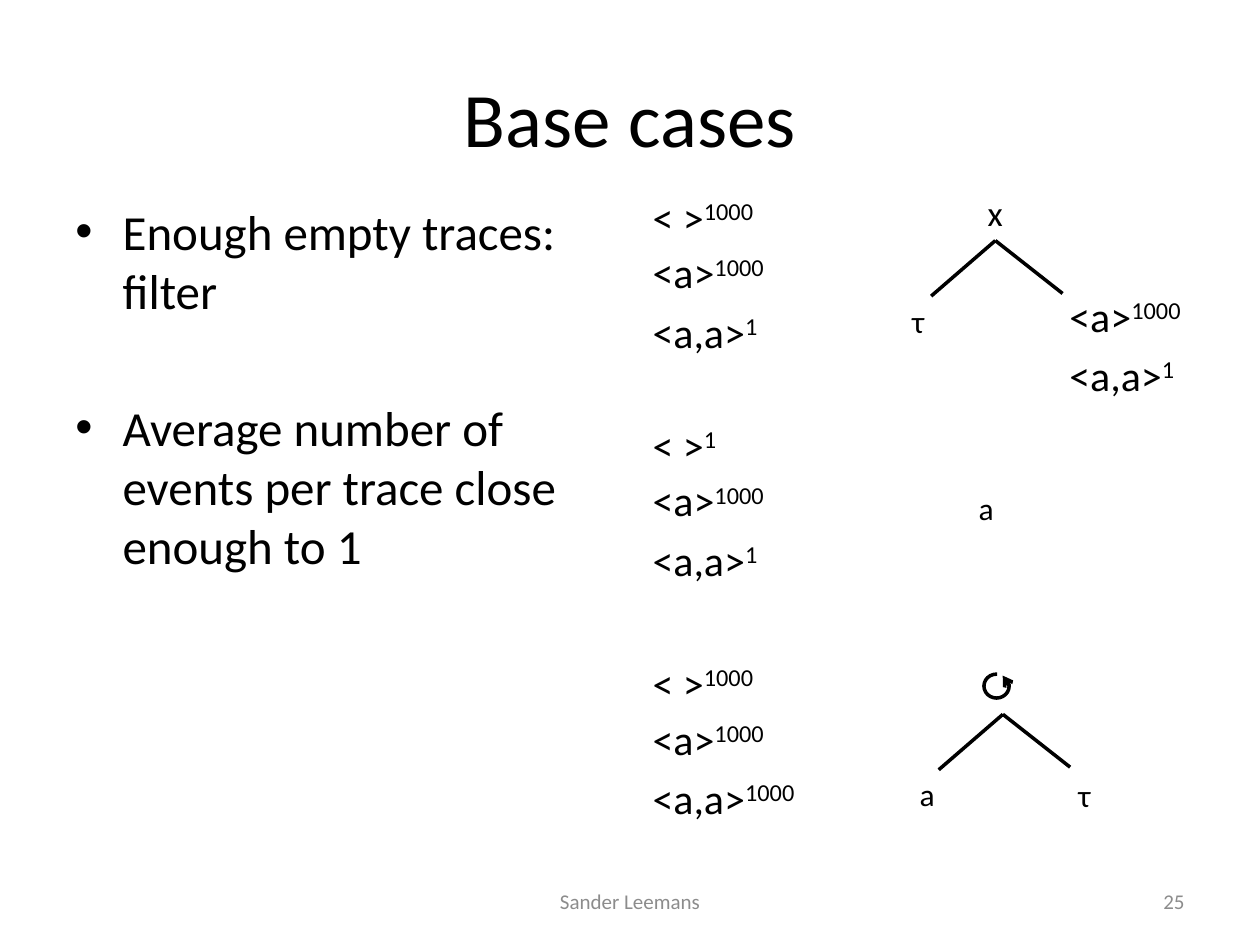
from lxml import etree
from pptx import Presentation
from pptx.dml import color
from pptx.enum import shapes, text
from pptx.oxml import ns
from pptx.util import Pt

COLOURS = {"ink": "000000", "muted": "8C8C8C"}
FONT = "Calibri"
TRACE_COLUMN = 365.8
TRACE_WIDTHS = {
    ("< >", "1"): 52.6, ("< >", "1000"): 77,
    ("<a>", "1000"): 83.5,
    ("<a,a>", "1"): 76.3, ("<a,a>", "1000"): 100.8,
}
CENTRE, RIGHT = text.PP_ALIGN.CENTER, text.PP_ALIGN.RIGHT


def apply(target, values):
    """Set each named attribute of the target."""
    for name, value in values.items():
        setattr(target, name, value)


def rgb(name):
    """Return a named colour."""
    return color.RGBColor.from_string(COLOURS[name])


def add_span(para, words, size, ink="ink", raised=False):
    """Append formatted words to a paragraph, optionally as superscript."""
    span = para.add_run()
    span.text = words
    apply(span.font, {"name": FONT, "size": Pt(size)})
    span.font.color.rgb = rgb(ink)
    if raised:
        span.font._element.set("baseline", "30000")


def add_box(parent, box, **frame_values):
    """Add an empty text box and return it."""
    shape = parent.add_textbox(*map(Pt, box))
    apply(shape.text_frame, frame_values)
    return shape


def add_label(parent, words, box, size=18):
    """Add a short unwrapped label."""
    label = add_box(parent, box, word_wrap=False,
                    auto_size=text.MSO_AUTO_SIZE.SHAPE_TO_FIT_TEXT)
    add_span(label.text_frame.paragraphs[0], words, size)
    return label


def add_title(page, words, box):
    """Place and format the title placeholder."""
    title = page.shapes.title
    apply(title, dict(zip(("left", "top", "width", "height"), map(Pt, box))))
    title.text_frame.vertical_anchor = text.MSO_ANCHOR.MIDDLE
    para = title.text_frame.paragraphs[0]
    para.alignment = CENTRE
    add_span(para, words, 44)


def add_bullets(page, items, box):
    """Add bulleted paragraphs, each given as lines and space before."""
    frame = add_box(page.shapes, box, word_wrap=True).text_frame
    for index, (lines, gap) in enumerate(items):
        para = frame.add_paragraph() if index else frame.paragraphs[0]
        para.space_before = Pt(gap)
        for number, line in enumerate(lines):
            if number:
                para.add_line_break()
            add_span(para, line, 28)
        props = para._p.get_or_add_pPr()
        props.set("marL", str(Pt(27)))
        props.set("indent", str(Pt(-27)))
        etree.SubElement(props, ns.qn("a:buFont"), typeface="Arial")
        etree.SubElement(props, ns.qn("a:buChar"), char="•")


def add_traces(parent, traces, left, top):
    """Stack traces with their frequencies as superscripts."""
    for trace, count in traces:
        width = TRACE_WIDTHS[trace, count]
        label = add_label(parent, trace, (left, top, width, 36), 24)
        add_span(label.text_frame.paragraphs[0], count, 24, raised=True)
        top += 31.7 if trace == "< >" else 34


def format_line(shape):
    """Give a shape a plain dark outline."""
    shape.line.width = Pt(2)
    shape.line.color.rgb = rgb("ink")


def add_branches(parent, x, y, operator=None):
    """Draw the two branches below a tree's operator."""
    for dx, dy in ((-36.7, 31.7), (38.4, 30.2)):
        branch = parent.add_connector(shapes.MSO_CONNECTOR.STRAIGHT,
                                      Pt(x), Pt(y), Pt(x + dx), Pt(y + dy))
        format_line(branch)
        etree.SubElement(branch._element.spPr, ns.qn("a:effectLst"))
        if operator is not None:
            branch.begin_connect(operator, 2)


def add_loop(parent, box):
    """Draw the circular loop operator with an arrowhead."""
    loop = parent.add_shape(shapes.MSO_SHAPE.ARC, *map(Pt, box))
    loop.adjustments[0], loop.adjustments[1] = 180.44, 163.68
    loop.fill.background()
    format_line(loop)
    loop.shadow.inherit = False
    etree.SubElement(loop.line._get_or_add_ln(), ns.qn("a:headEnd"), type="arrow")


def add_choice_tree(parent, x, y):
    """Draw the choice operator above its silent leaf."""
    operator = add_label(parent, "x", (x - 11.5, y - 31.7, 23, 31.7), 20)
    add_branches(parent, x, y, operator)
    add_label(parent, "τ", (x - 54.7, y + 31.7, 21.6, 29))


def add_loop_tree(parent, x, y):
    """Draw the loop operator above its two leaves."""
    add_loop(parent, (x - 10.8, y - 23, 14.4, 13.7))
    add_branches(parent, x, y)
    add_label(parent, "a", (x - 54.7, y + 31.2, 23, 29))
    add_label(parent, "τ", (x + 36, y + 31.7, 21.6, 29))


def add_leaf(parent, x, y):
    """Draw a tree that is a single activity."""
    add_label(parent, "a", (x, y, 23, 29))


def add_example(page, traces, top, draw_tree, x, dy):
    """Group a log with the tree found for it."""
    group = page.shapes.add_group_shape().shapes
    add_traces(group, traces, TRACE_COLUMN, top)
    draw_tree(group, x, top + dy)


def add_footer(page, words, box, alignment):
    """Add one muted footer text."""
    frame = add_box(page.shapes, box, word_wrap=True,
                    vertical_anchor=text.MSO_ANCHOR.MIDDLE).text_frame
    frame.paragraphs[0].alignment = alignment
    add_span(frame.paragraphs[0], words, 12, "muted")


def main():
    """Build and save the slide."""
    deck = Presentation()
    apply(deck, {"slide_width": Pt(720), "slide_height": Pt(540)})
    page = deck.slides.add_slide(deck.slide_layouts.get_by_name("Title Only"))
    add_title(page, "Base cases", (36, 21.6, 648, 90))
    add_bullets(page, [
        (["Enough empty traces:", "filter"], 5.6),
        (["Average number of events per trace close enough to 1"], 44.8),
    ], (36, 111.6, 318.2, 356.4))

    rest = [("<a>", "1000"), ("<a,a>", "1")]
    frequent = [(trace, "1000") for trace in ("< >", "<a>", "<a,a>")]
    add_example(page, [("< >", "1000")] + rest, 105.8, add_choice_tree, 568.8, 31.7)
    add_example(page, [("< >", "1")] + rest, 236.2, add_leaf, 552.2, 39.6)
    add_example(page, frequent, 372.2, add_loop_tree, 573.1, 36)
    add_traces(page.shapes, rest, 604, 162.2)

    add_footer(page, "Sander Leemans", (246, 500.4, 228, 28.8), CENTRE)
    add_footer(page, "25", (516, 500.4, 168, 28.8), RIGHT)
    deck.save("out.pptx")


if __name__ == "__main__":
    main()
